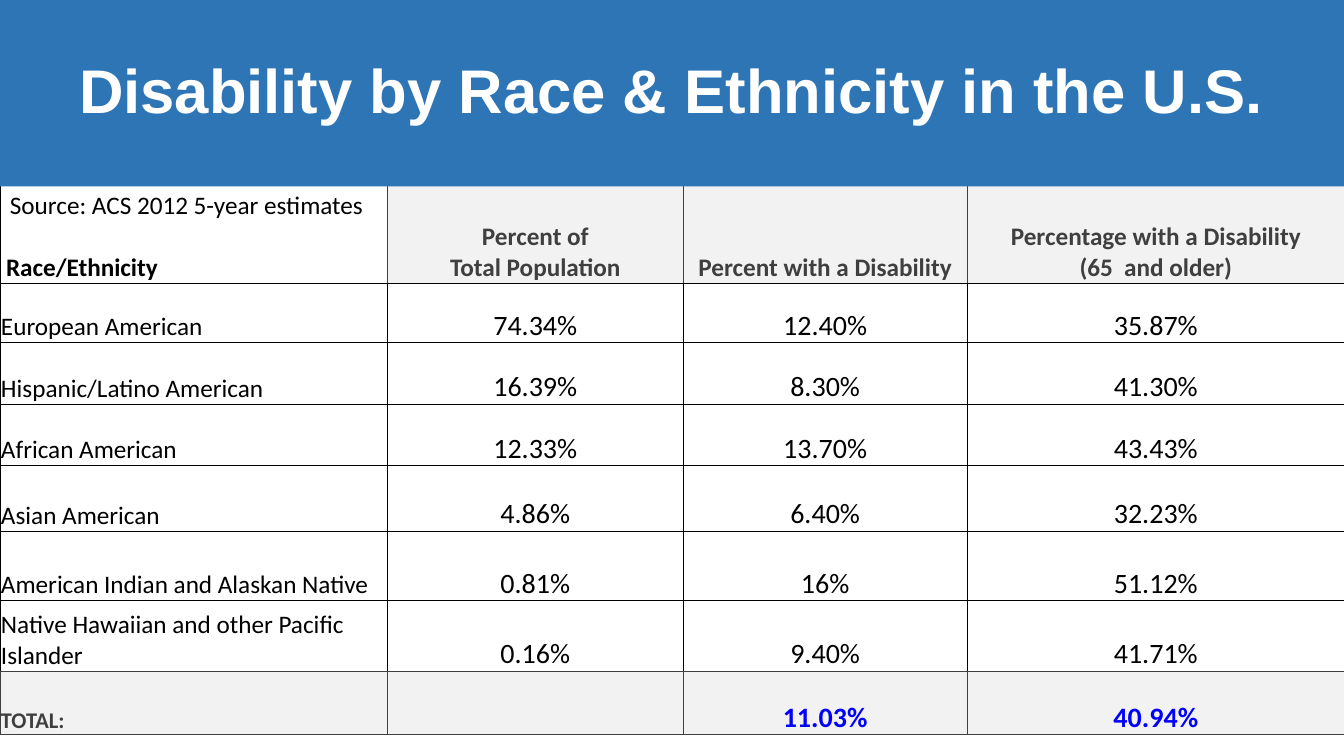
from dataclasses import dataclass

from lxml import etree
from pptx import Presentation
from pptx.dml.color import RGBColor
from pptx.enum.text import MSO_ANCHOR, MSO_AUTO_SIZE, PP_ALIGN
from pptx.oxml.ns import qn
from pptx.util import Inches, Pt

LEFT, CENTER = PP_ALIGN.LEFT, PP_ALIGN.CENTER
MIDDLE, BOTTOM = MSO_ANCHOR.MIDDLE, MSO_ANCHOR.BOTTOM
NO_AUTOFIT = MSO_AUTO_SIZE.NONE
TITLE_ONLY_LAYOUT = 5

BLACK = RGBColor(0x00, 0x00, 0x00)
WHITE = RGBColor(0xFF, 0xFF, 0xFF)
DARK_GRAY = RGBColor(0x3F, 0x3F, 0x3F)
LIGHT_GRAY = RGBColor(0xF2, 0xF2, 0xF2)
BANNER_BLUE = RGBColor(0x2E, 0x75, 0xB6)
TOTAL_BLUE = RGBColor(0x00, 0x00, 0xFF)

SLIDE_WIDTH, SLIDE_HEIGHT = 13.33, 7.5
COLUMN_WIDTHS = (3.84, 2.94, 2.81, 3.75)
ROW_HEIGHTS = (1.02, 0.59, 0.61, 0.61, 0.65, 0.69, 0.7, 0.63)
TABLE_ROWS = (
    ("Race/Ethnicity", "Percent of\nTotal Population", "Percent with a Disability",
     "Percentage with a Disability\n(65  and older)"),
    ("European American", "74.34%", "12.40%", "35.87%"),
    ("Hispanic/Latino American", "16.39%", "8.30%", "41.30%"),
    ("African American", "12.33%", "13.70%", "43.43%"),
    ("Asian American", "4.86%", "6.40%", "32.23%"),
    ("American Indian and Alaskan Native", "0.81%", "16%", "51.12%"),
    ("Native Hawaiian and other Pacific Islander", "0.16%", "9.40%", "41.71%"),
    ("TOTAL:", "", "11.03%", "40.94%"),
)
TOTAL_ROW = len(TABLE_ROWS) - 1


@dataclass(frozen=True)
class TextStyle:
    size: int
    color: RGBColor = BLACK
    bold: bool = False
    alignment: PP_ALIGN = CENTER
    font_name: str = "Calibri"


@dataclass(frozen=True)
class CellStyle:
    text: TextStyle
    fill: RGBColor = WHITE
    edge: RGBColor = BLACK
    bottom_edge: RGBColor = BLACK
    left_margin: float = 0.01


TITLE_TEXT = TextStyle(44, WHITE, True, font_name="Arial")
SOURCE_TEXT = TextStyle(18, alignment=LEFT)


def choose_cell_style(row: int, column: int) -> CellStyle:
    is_label = column == 0
    alignment = LEFT if is_label else CENTER
    if row == 0:
        if is_label:
            return CellStyle(TextStyle(18, bold=True, alignment=LEFT), left_margin=0.06)
        return CellStyle(TextStyle(18, DARK_GRAY, True), LIGHT_GRAY, DARK_GRAY)
    if row == TOTAL_ROW:
        size, color = (16, DARK_GRAY) if is_label else (20, TOTAL_BLUE)
        return CellStyle(TextStyle(size, color, True, alignment), LIGHT_GRAY, DARK_GRAY, DARK_GRAY)
    bottom_edge = DARK_GRAY if row == TOTAL_ROW - 1 else BLACK
    return CellStyle(TextStyle(18 if is_label else 20, alignment=alignment), bottom_edge=bottom_edge)


def apply_format(target, values: dict) -> None:
    for name, value in values.items():
        setattr(target, name, value)


def write_text(text_frame, text: str, style: TextStyle) -> None:
    text_frame.text = text
    for paragraph in text_frame.paragraphs:
        paragraph.alignment = style.alignment
        apply_format(paragraph.font, {
            "name": style.font_name, "size": Pt(style.size), "bold": style.bold})
        paragraph.font.color.rgb = style.color


def draw_border(cell, side: str, color: RGBColor) -> None:
    properties = cell._tc.get_or_add_tcPr()
    line = etree.SubElement(properties, qn(f"a:ln{side}"), w=str(Pt(0.5)))
    fill = etree.SubElement(line, qn("a:solidFill"))
    etree.SubElement(fill, qn("a:srgbClr"), val=str(color))


def format_cell(cell, text: str, style: CellStyle) -> None:
    write_text(cell.text_frame, text, style.text)
    apply_format(cell, {
        "vertical_anchor": BOTTOM,
        "margin_left": Inches(style.left_margin),
        "margin_right": Inches(0.01),
        "margin_top": Inches(0.01),
        "margin_bottom": Inches(0),
    })
    for side in "LRT":
        draw_border(cell, side, style.edge)
    draw_border(cell, "B", style.bottom_edge)
    cell.fill.solid()
    cell.fill.fore_color.rgb = style.fill


def add_disability_table(slide) -> None:
    table = slide.shapes.add_table(
        len(ROW_HEIGHTS), len(COLUMN_WIDTHS), Inches(0), Inches(1.79),
        Inches(SLIDE_WIDTH), Inches(sum(ROW_HEIGHTS))).table
    apply_format(table, {"first_row": False, "horz_banding": False})
    for column, width in zip(table.columns, COLUMN_WIDTHS):
        column.width = Inches(width)
    for row, height in zip(table.rows, ROW_HEIGHTS):
        row.height = Inches(height)
    for row_index, texts in enumerate(TABLE_ROWS):
        for column_index, text in enumerate(texts):
            format_cell(table.cell(row_index, column_index), text,
                        choose_cell_style(row_index, column_index))


def add_source(slide) -> None:
    source = slide.shapes.add_textbox(Inches(0), Inches(1.83), Inches(5.47), Inches(0.4))
    source.text_frame.word_wrap = True
    write_text(source.text_frame, "Source: ACS 2012 5-year estimates", SOURCE_TEXT)


def format_title(slide) -> None:
    title = slide.shapes.title
    apply_format(title, {
        "left": Inches(0), "top": Inches(0),
        "width": Inches(SLIDE_WIDTH), "height": Inches(1.85)})
    title.fill.solid()
    title.fill.fore_color.rgb = BANNER_BLUE
    apply_format(title.text_frame, {
        "word_wrap": True, "vertical_anchor": MIDDLE, "auto_size": NO_AUTOFIT})
    write_text(title.text_frame, "Disability by Race & Ethnicity in the U.S.", TITLE_TEXT)
    title.text_frame.paragraphs[0].line_spacing = 0.9
    title.element.getparent().append(title.element)


def main() -> None:
    presentation = Presentation()
    apply_format(presentation, {
        "slide_width": Inches(SLIDE_WIDTH), "slide_height": Inches(SLIDE_HEIGHT)})
    slide = presentation.slides.add_slide(presentation.slide_layouts[TITLE_ONLY_LAYOUT])
    add_disability_table(slide)
    add_source(slide)
    format_title(slide)
    presentation.save("out.pptx")


if __name__ == "__main__":
    main()
